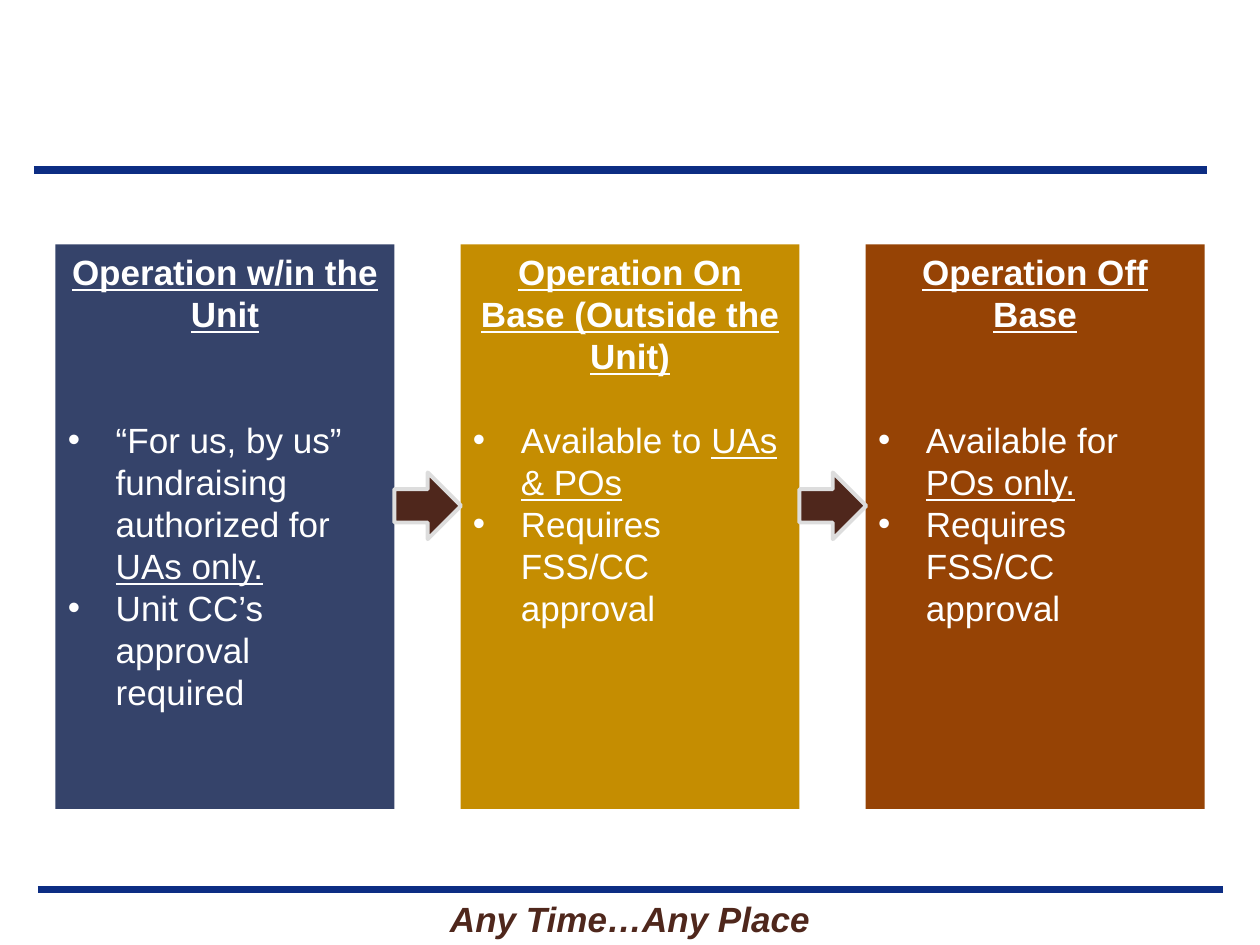
from lxml import etree
from pptx import Presentation
from pptx.dml.color import RGBColor
from pptx.enum.shapes import MSO_CONNECTOR, MSO_SHAPE
from pptx.enum.text import MSO_ANCHOR, PP_ALIGN
from pptx.oxml.ns import qn
from pptx.util import Inches, Pt

STRAIGHT = MSO_CONNECTOR.STRAIGHT
RECTANGLE, RIGHT_ARROW = MSO_SHAPE.RECTANGLE, MSO_SHAPE.RIGHT_ARROW
TOP = MSO_ANCHOR.TOP
CENTER, LEFT = PP_ALIGN.CENTER, PP_ALIGN.LEFT

WHITE = RGBColor(0xFF, 0xFF, 0xFF)
RULE_BLUE = RGBColor(0x0C, 0x2D, 0x83)
BROWN = RGBColor(0x4F, 0x27, 0x1C)
ARROW_EDGE = RGBColor(0xDD, 0xDD, 0xDD)
NAVY = RGBColor(0x35, 0x43, 0x6A)
GOLD = RGBColor(0xC5, 0x8D, 0x01)
RUST = RGBColor(0x96, 0x43, 0x05)

FONT_NAME = "Arial"
FONT_SIZE = 20
LINE_HEIGHT = 24
PANEL_TOP, PANEL_WIDTH, PANEL_HEIGHT = 1.94, 2.69, 4.48
FIRST_LEFT, LAST_LEFT = 0.44, 6.87
ARROW_TOP, ARROW_SIZE = 3.75, 0.53

FSS_APPROVAL = [("Requires FSS/CC approval", False)]
PANELS = [
    (NAVY, "Operation w/in the Unit", 2, [
        [("“For us, by us” fundraising authorized for ", False), ("UAs only.", True)],
        [("Unit CC’s approval required", False)],
    ]),
    (GOLD, "Operation On Base (Outside the Unit)", 1, [
        [("Available to ", False), ("UAs & POs", True)],
        FSS_APPROVAL,
    ]),
    (RUST, "Operation Off Base", 2, [
        [("Available for ", False), ("POs only.", True)],
        FSS_APPROVAL,
    ]),
]


def add_run(paragraph, text, color, bold=False, italic=False, underline=False):
    """Append one formatted run to a paragraph."""
    run = paragraph.add_run()
    run.text = text
    font = run.font
    font.name, font.size = FONT_NAME, Pt(FONT_SIZE)
    font.bold, font.italic, font.underline = bold, italic, underline
    font.color.rgb = color


def set_bullet(paragraph):
    """Give a paragraph a round bullet with a hanging indent."""
    properties = paragraph._p.get_or_add_pPr()
    properties.set("marL", str(Inches(0.38)))
    properties.set("indent", str(Inches(-0.38)))
    etree.SubElement(properties, qn("a:buFont")).set("typeface", FONT_NAME)
    etree.SubElement(properties, qn("a:buChar")).set("char", "•")


def add_rule(slide, left, right, top):
    """Draw a thick horizontal rule."""
    rule = slide.shapes.add_connector(
        STRAIGHT, Inches(left), Inches(top), Inches(right), Inches(top))
    rule.line.color.rgb = RULE_BLUE
    rule.line.width = Pt(4.5)
    etree.SubElement(rule._element.spPr, qn("a:effectLst"))


def add_motto(slide):
    """Write the motto at the foot of the slide."""
    box = slide.shapes.add_textbox(
        Inches(3.03), Inches(7.07), Inches(3.94), Inches(0.43))
    box.text_frame.word_wrap = True
    paragraph = box.text_frame.paragraphs[0]
    paragraph.alignment = CENTER
    add_run(paragraph, "Any Time…Any Place", BROWN, bold=True, italic=True)


def add_panel(slide, left, color, heading, gap_lines, bullets):
    """Draw a coloured panel with a heading and its bullets."""
    panel = slide.shapes.add_shape(
        RECTANGLE, Inches(left), Inches(PANEL_TOP),
        Inches(PANEL_WIDTH), Inches(PANEL_HEIGHT))
    panel.shadow.inherit = False
    panel.fill.solid()
    panel.fill.fore_color.rgb = color
    panel.line.fill.background()
    frame = panel.text_frame
    frame.word_wrap = True
    frame.vertical_anchor = TOP
    title = frame.paragraphs[0]
    title.alignment = CENTER
    add_run(title, heading, WHITE, bold=True, underline=True)
    for index, runs in enumerate(bullets):
        paragraph = frame.add_paragraph()
        paragraph.alignment = LEFT
        paragraph.space_before = Pt(0 if index else gap_lines * LINE_HEIGHT)
        set_bullet(paragraph)
        for text, underline in runs:
            add_run(paragraph, text, WHITE, underline=underline)


def add_arrow(slide, left):
    """Draw a block arrow leading to the next panel."""
    arrow = slide.shapes.add_shape(
        RIGHT_ARROW, Inches(left), Inches(ARROW_TOP),
        Inches(ARROW_SIZE), Inches(ARROW_SIZE))
    arrow.shadow.inherit = False
    arrow.fill.solid()
    arrow.fill.fore_color.rgb = BROWN
    arrow.line.color.rgb = ARROW_EDGE
    arrow.line.width = Pt(2.25)


def main():
    """Build and save the slide."""
    presentation = Presentation()
    presentation.slide_width, presentation.slide_height = Inches(10), Inches(7.5)
    slide = presentation.slides.add_slide(presentation.slide_layouts[6])
    add_rule(slide, 0.3, 9.71, 7.06)
    add_rule(slide, 0.27, 9.58, 1.35)
    add_motto(slide)
    pitch = (LAST_LEFT - FIRST_LEFT) / (len(PANELS) - 1)
    lefts = [FIRST_LEFT + index * pitch for index in range(len(PANELS))]
    for left, panel in zip(lefts, PANELS):
        add_panel(slide, left, *panel)
    for left in lefts[:-1]:
        add_arrow(slide, left + PANEL_WIDTH)
    presentation.save("out.pptx")


if __name__ == "__main__":
    main()
